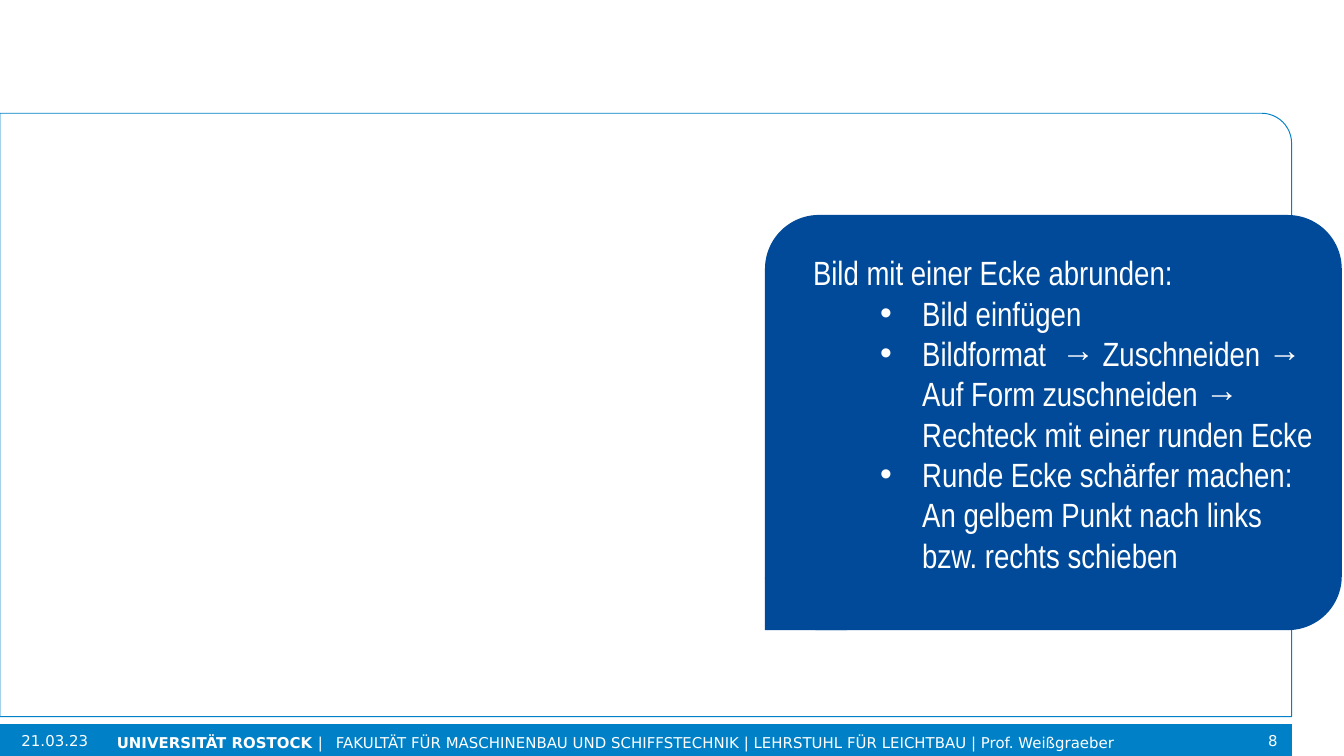
from dataclasses import dataclass

from lxml import etree
from pptx import Presentation
from pptx import util as u
from pptx.dml.color import RGBColor
from pptx.enum import shapes, text
from pptx.oxml.ns import qn

WHITE, LIGHT_BLUE, DARK_BLUE = "FFFFFF", "0081C7", "004A99"
FOOTER_FONT, CALLOUT_FONT = "DejaVu Sans", "Arial Narrow"


@dataclass
class Box:
    left: float
    top: float
    width: float
    height: float

    def lengths(self):
        return [u.Pt(v) for v in (self.left, self.top, self.width, self.height)]


@dataclass
class FooterItem:
    box: Box
    runs: list[tuple[str, bool]]
    margins: tuple[float, float, float, float] = (0, 3.6, 7.2, 3.6)
    align: text.PP_ALIGN = text.PP_ALIGN.LEFT
    anchor: text.MSO_ANCHOR = text.MSO_ANCHOR.MIDDLE


def color(value: str) -> RGBColor:
    return RGBColor.from_string(value)


def add_block(s, kind, box: Box, fill=None, line=None, adjust=None):
    sp = s.shapes.add_shape(kind, *box.lengths())
    sp.shadow.inherit = False
    if fill:
        sp.fill.solid()
        sp.fill.fore_color.rgb = color(fill)
    else:
        sp.fill.background()
    if line:
        sp.line.color.rgb = color(line)
        sp.line.width = u.Pt(0.5)
    else:
        sp.line.fill.background()
    if adjust is not None:
        sp.adjustments[0] = adjust
    return sp


def set_frame(tf, margins, anchor):
    tf.word_wrap = True
    tf.vertical_anchor = anchor
    tf.margin_left, tf.margin_top, tf.margin_right, tf.margin_bottom = map(u.Pt, margins)


def add_run(p, content: str, *, font: str, size: float, bold: bool = False):
    r = p.add_run()
    r.text = content
    r.font.name = font
    r.font.size = u.Pt(size)
    r.font.bold = bold
    r.font.color.rgb = color(WHITE)


def set_bullet(p, left: float, hanging: float):
    p.level = 1
    pPr = p._p.get_or_add_pPr()
    pPr.set("marL", str(u.Pt(left)))
    pPr.set("indent", str(-u.Pt(hanging)))
    etree.SubElement(pPr, qn("a:buFont")).set("typeface", "Arial")
    etree.SubElement(pPr, qn("a:buChar")).set("char", "•")


def add_footer_item(s, item: FooterItem):
    tf = s.shapes.add_textbox(*item.box.lengths()).text_frame
    set_frame(tf, item.margins, item.anchor)
    p = tf.paragraphs[0]
    p.alignment = item.align
    for content, bold in item.runs:
        add_run(p, content, font=FOOTER_FONT, size=8, bold=bold)


def add_callout(s, box: Box, heading: str, steps: list[str]):
    sp = add_block(s, shapes.MSO_SHAPE.ROUNDED_RECTANGLE, box, fill=DARK_BLUE, adjust=0.13)
    tf = sp.text_frame
    set_frame(tf, (17.3, 11.5, 7.2, 3.6), text.MSO_ANCHOR.TOP)
    for i, content in enumerate([heading, *steps]):
        p = tf.paragraphs[0] if i == 0 else tf.add_paragraph()
        p.alignment = text.PP_ALIGN.LEFT
        if i:
            set_bullet(p, 58.5, 22.5)
        add_run(p, content, font=CALLOUT_FONT, size=18)
    corner = Box(box.left, box.top + box.height - 28, 44, 28)
    add_block(s, shapes.MSO_SHAPE.RECTANGLE, corner, fill=DARK_BLUE)


FOOTER = [
    FooterItem(Box(62.6, 389.5, 122, 17), [("UNIVERSITÄT ROSTOCK ", True), ("|", False)],
               anchor=text.MSO_ANCHOR.TOP),
    FooterItem(Box(656, 388, 35.5, 17), [("8", False)], margins=(7.2, 3.6, 7.2, 3.6),
               align=text.PP_ALIGN.RIGHT),
    FooterItem(Box(11.5, 388, 40, 17), [("21.03.23", False)], margins=(0, 3.6, 0, 3.6)),
    FooterItem(Box(180, 389.5, 452, 17), [
        ("FAKULTÄT FÜR MASCHINENBAU UND SCHIFFSTECHNIK | "
         "LEHRSTUHL FÜR LEICHTBAU | Prof. Weißgraeber", False)]),
]
STEPS = [
    "Bild einfügen",
    "Bildformat  → Zuschneiden → Auf Form zuschneiden → Rechteck mit einer runden Ecke",
    "Runde Ecke schärfer machen: An gelbem Punkt nach links bzw. rechts schieben",
]


def main():
    prs = Presentation()
    prs.slide_width, prs.slide_height = u.Pt(720), u.Pt(405)
    s = prs.slides.add_slide(prs.slide_layouts[6])
    add_block(s, shapes.MSO_SHAPE.RECTANGLE, Box(0, 388, 692, 17), LIGHT_BLUE, LIGHT_BLUE)
    add_block(s, shapes.MSO_SHAPE.ROUND_1_RECTANGLE, Box(0, 60.7, 692, 323.2),
              line=LIGHT_BLUE, adjust=0.05)
    for item in FOOTER:
        add_footer_item(s, item)
    add_callout(s, Box(409.8, 115.2, 309, 222.4), "Bild mit einer Ecke abrunden:", STEPS)
    prs.save("out.pptx")


if __name__ == "__main__":
    main()
